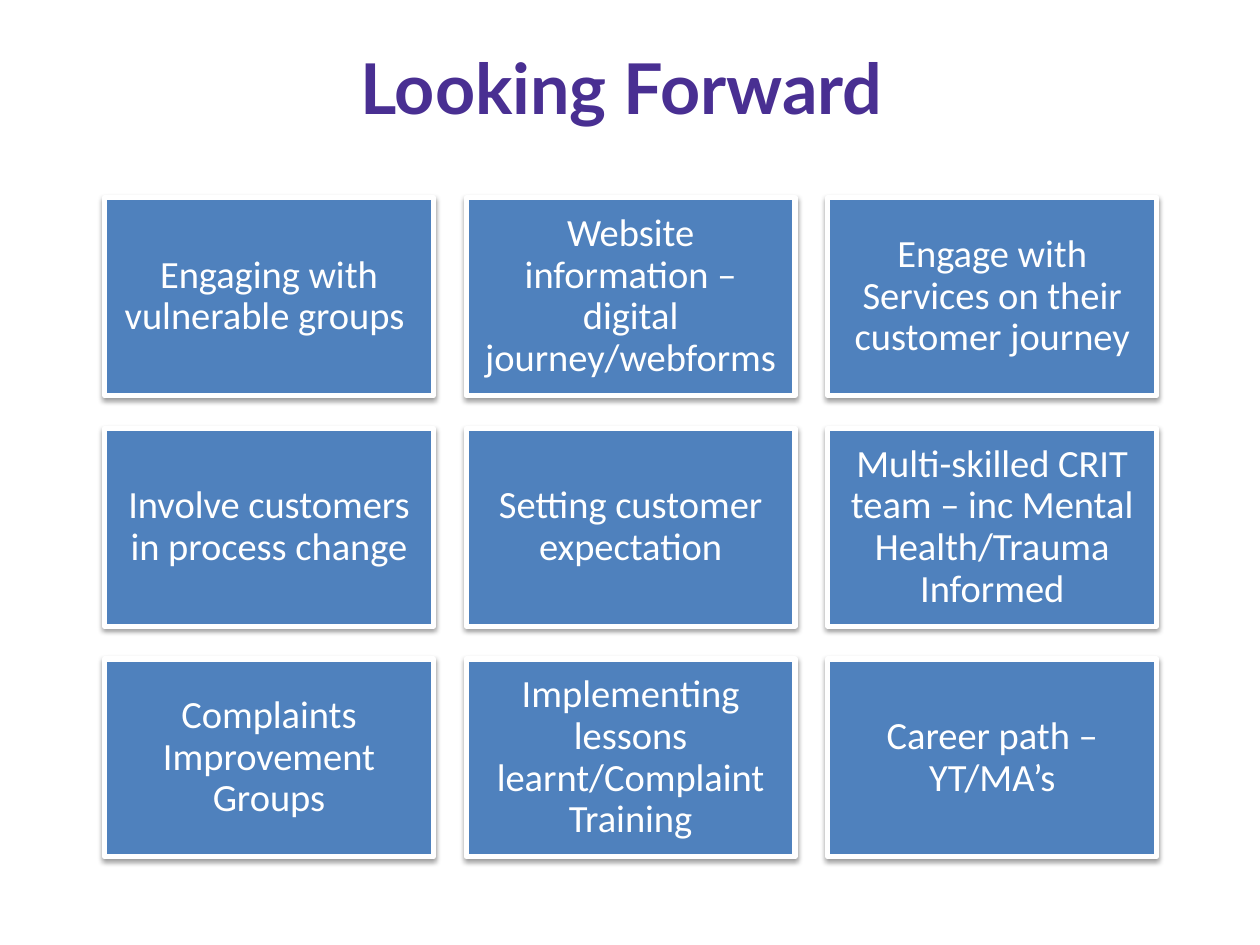
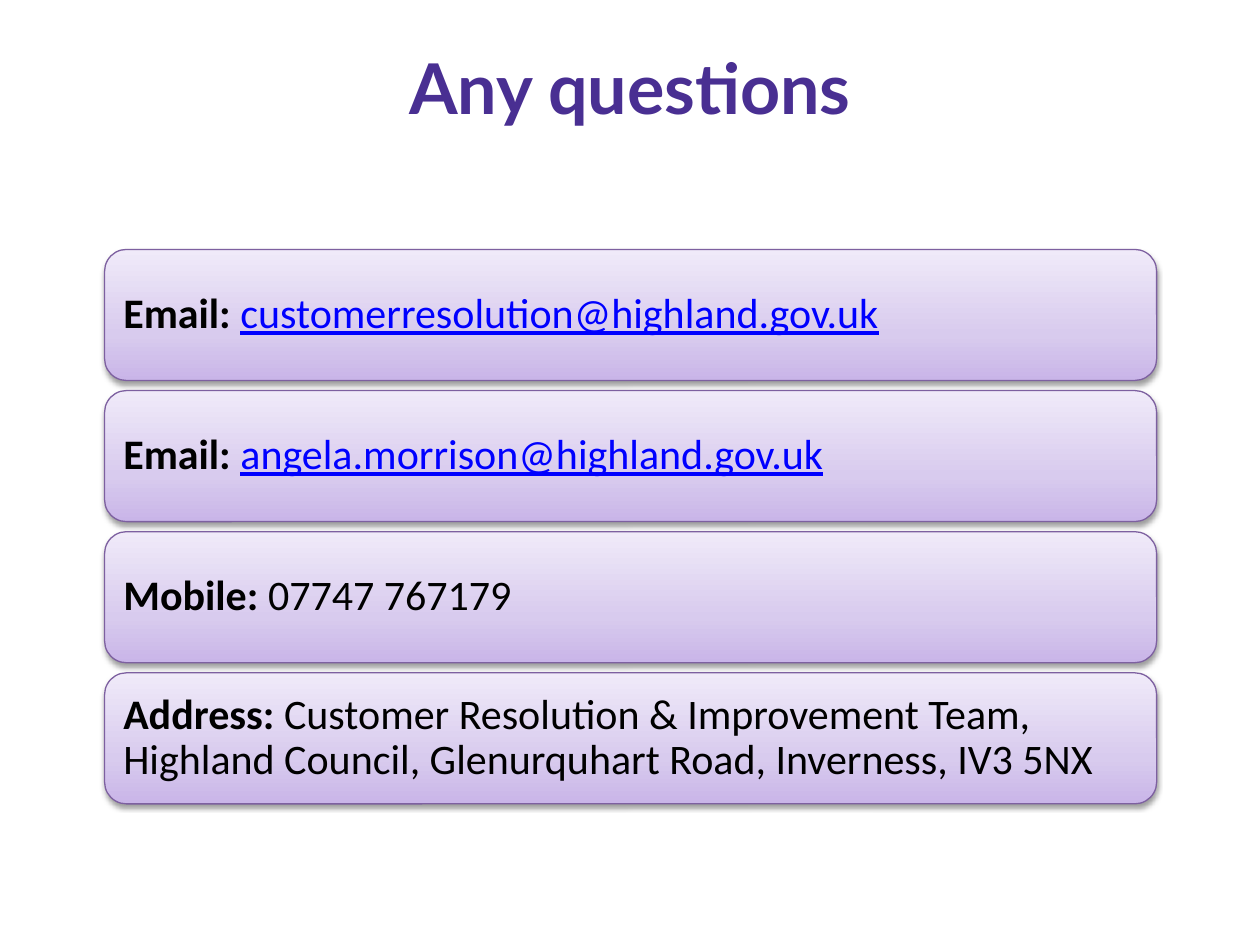
import copy
import pptx
import pptx.dml.color
import pptx.enum.shapes
import pptx.enum.text
import pptx.oxml
import pptx.oxml.ns
import pptx.util

RGB = pptx.dml.color.RGBColor
Inches, Pt = pptx.util.Inches, pptx.util.Pt
SHAPE = pptx.enum.shapes.MSO_SHAPE
ALIGN = pptx.enum.text.PP_ALIGN
MIDDLE = pptx.enum.text.MSO_ANCHOR.MIDDLE
qn = pptx.oxml.ns.qn

PLANS_TITLE = "Looking Forward "
PLANS = [
    ["Engaging with vulnerable groups ",
     "Website information – digital journey/webforms",
     "Engage with Services on their customer journey"],
    ["Involve customers in process change",
     "Setting customer expectation",
     "Multi-skilled CRIT team – inc Mental Health/Trauma Informed"],
    ["Complaints Improvement Groups",
     "Implementing lessons learnt/Complaint Training",
     "Career path – YT/MA’s"],
]
ASK_TITLE = "Any questions"
# label, value, shown as a web address
CONTACTS = [
    ("Email: ", "customerresolution@highland.gov.uk", True),
    ("Email: ", "angela.morrison@highland.gov.uk", True),
    ("Mobile: ", "07747 767179", False),
    ("Address: ", "Customer Resolution & Improvement Team, Highland Council, "
                  "Glenurquhart Road, Inverness, IV3 5NX", False),
]

PURPLE = RGB(0x49, 0x2F, 0x92)
BLUE = RGB(0x4F, 0x81, 0xBD)
WHITE = RGB(0xFF, 0xFF, 0xFF)
BLACK = RGB(0, 0, 0)
LINK = RGB(0, 0, 0xFF)
EDGE = RGB(0x7D, 0x60, 0xA0)
FADE = [(0, RGB(0xC9, 0xB5, 0xE8)), (0.35, RGB(0xD8, 0xCB, 0xEE)),
        (1, RGB(0xF0, 0xEA, 0xF9))]

WIDE, HIGH = 10, 7.5
LEFT, SPAN = 0.83, 8.35
TILE_TOP, TILE_HIGH, TILE_GAP = 1.57, 1.57, 0.26
BAR_TOP, BAR_HIGH, BAR_GAP = 1.98, 1.04, 0.08

SHADOW = (
    '<a:outerShdw xmlns:a="http://schemas.openxmlformats.org/drawingml/2006/main"'
    f' blurRad="{Pt(3.1)}" dist="{Pt(1.6)}" dir="5400000" rotWithShape="0">'
    '<a:srgbClr val="000000"><a:alpha val="38000"/></a:srgbClr></a:outerShdw>')


def add_run(para, text, font, size, color, bold=False, under=False):
    run = para.add_run()
    run.text = text
    face = run.font
    face.name, face.size, face.bold = font, Pt(size), bold
    face.color.rgb = color
    if under:
        face.underline = True


def add_page(deck, text):
    page = deck.slides.add_slide(deck.slide_layouts[5])
    title = page.shapes.title
    title.left, title.top = Inches(0.5), Inches(0.3)
    title.width, title.height = Inches(WIDE - 1), Inches(0.77)
    title.text_frame.vertical_anchor = MIDDLE
    para = title.text_frame.paragraphs[0]
    para.alignment = ALIGN.CENTER
    add_run(para, text, "Lato", 40, PURPLE, bold=True)
    return page


def add_box(page, kind, place, edge, width, inset, align):
    """Add a shadowed shape; return it with its empty first paragraph."""
    box = page.shapes.add_shape(kind, *map(Inches, place))
    box.shadow.inherit = False
    glow = box._element.spPr.find(qn("a:effectLst"))
    glow.append(pptx.oxml.parse_xml(SHADOW))
    box.line.color.rgb = edge
    box.line.width = Pt(width)
    frame = box.text_frame
    frame.word_wrap = True
    frame.vertical_anchor = MIDDLE
    frame.margin_left = frame.margin_right = Inches(inset)
    frame.margin_top = frame.margin_bottom = Inches(inset)
    para = frame.paragraphs[0]
    para.alignment = align
    para.line_spacing = 0.9
    return box, para


def fade(fill):
    """Blend the three FADE colours from the bottom edge upwards."""
    fill.gradient()
    fill.gradient_angle = 90


def add_fade(box):
    fade(box.fill)
    first = box._element.spPr.find(".//" + qn("a:gs"))
    first.addnext(copy.deepcopy(first))
    for stop, (share, color) in zip(box.fill.gradient_stops, FADE):
        stop.position = share
        stop.color.rgb = color


def add_plans(deck):
    page = add_page(deck, PLANS_TITLE)
    for i, row in enumerate(PLANS):
        wide = (SPAN - TILE_GAP * (len(row) - 1)) / len(row)
        top = TILE_TOP + i * (TILE_HIGH + TILE_GAP)
        for j, text in enumerate(row):
            place = LEFT + j * (wide + TILE_GAP), top, wide, TILE_HIGH
            tile, para = add_box(page, SHAPE.RECTANGLE, place, WHITE, 3,
                                 0.09, ALIGN.CENTER)
            tile.fill.solid()
            tile.fill.fore_color.rgb = BLUE
            add_run(para, text, "Calibri", 22, WHITE)


def add_contacts(deck):
    page = add_page(deck, ASK_TITLE)
    for i, (label, value, web) in enumerate(CONTACTS):
        place = LEFT, BAR_TOP + i * (BAR_HIGH + BAR_GAP), SPAN, BAR_HIGH
        bar, para = add_box(page, SHAPE.ROUNDED_RECTANGLE, place, EDGE, 0.75,
                            0.1, ALIGN.LEFT)
        add_fade(bar)
        add_run(para, label, "Calibri", 24, BLACK, bold=True)
        add_run(para, value, "Calibri", 24, LINK if web else BLACK, under=web)


def main():
    deck = pptx.Presentation()
    deck.slide_width, deck.slide_height = Inches(WIDE), Inches(HIGH)
    add_plans(deck)
    add_contacts(deck)
    deck.save("out.pptx")


if __name__ == "__main__":
    main()
